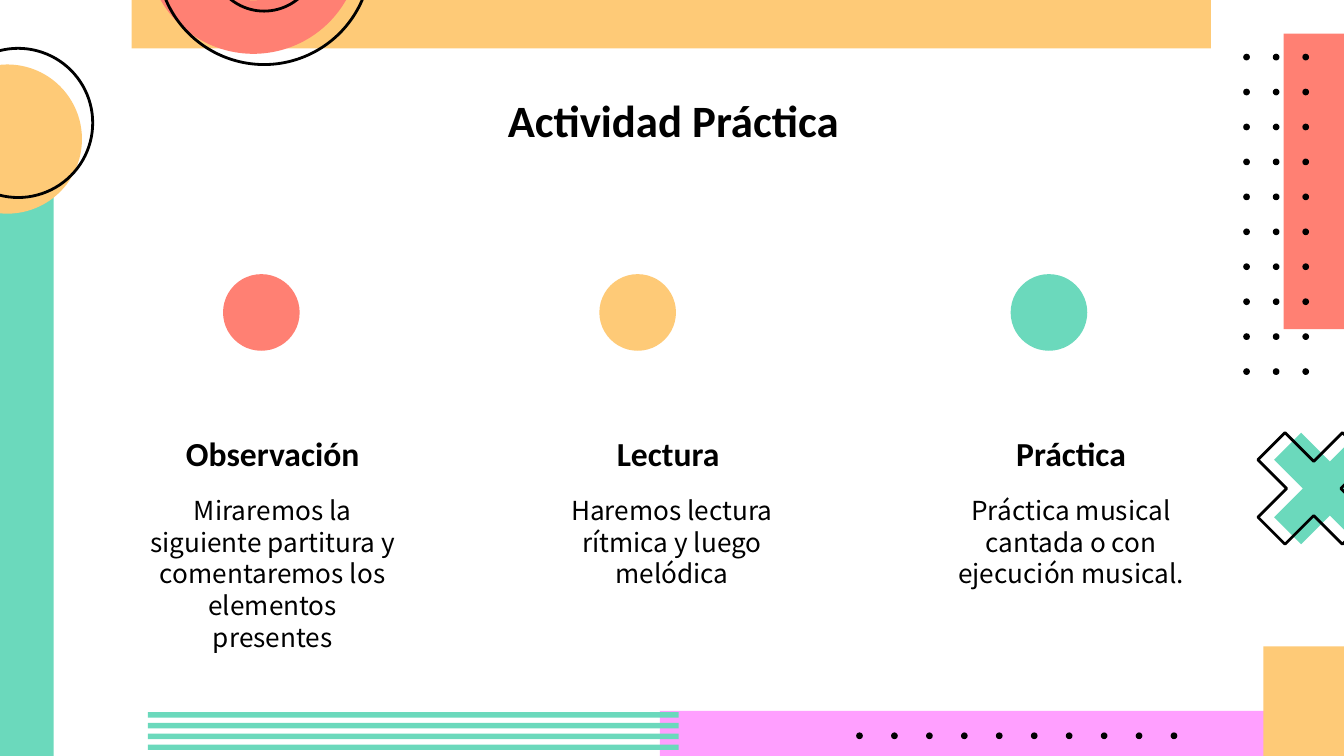
from pptx import Presentation
from pptx.dml.color import RGBColor
from pptx.enum import shapes, text
from pptx.util import Inches, Pt

HUES = {"coral": "FF8073", "sand": "FECA77", "mint": "6BD9BC",
        "pink": "FF9FFF", "ink": "000000"}
KIND = shapes.MSO_SHAPE
RECT, OVAL, CROSS, ARC = (KIND.RECTANGLE, KIND.OVAL,
                          KIND.MATH_MULTIPLY, KIND.BLOCK_ARC)

TITLE = "Actividad Práctica"
STEPS = [  # heading, body, dot colour, dot left
    ("Observación",
     "Miraremos la siguiente partitura y comentaremos los elementos presentes",
     "coral", 1.66),
    ("Lectura ", "Haremos lectura rítmica y luego melódica", "sand", 4.46),
    ("Práctica", "Práctica musical cantada o con ejecución musical.",
     "mint", 7.52),
]
HEAD = {"name": "Calibri", "bold": True}
BODY = {"name": "Noto Sans CJK KR", "bold": False, "size": Pt(14)}

# Decoration, back to front: kind, (left, top, width, height), fill
# A fill of None gives a black outline.
STRIPES = [(RECT, (1.1, 5.3 + 0.08 * i, 3.95, 0.04), "mint") for i in range(4)]
LOW_DOTS = [(OVAL, (6.37 + 0.26 * i, 5.45, 0.05, 0.05), "ink")
            for i in range(10)]
SIDE_DOTS = [(OVAL, (9.25 + 0.22 * col, 0.4 + 0.26 * row, 0.05, 0.05), "ink")
             for col in range(3) for row in range(10)]
DECOR = [
    (RECT, (9.55, 0.25, 0.45, 2.2), "coral"),
    (RECT, (4.91, 5.29, 5.09, 0.5), "pink"),
    *STRIPES,
    (RECT, (9.4, 4.81, 1.02, 1.02), "sand"),
    *LOW_DOTS,
    (RECT, (-0.03, 1.08, 0.43, 4.55), "mint"),
    (OVAL, (-0.5, 0.48, 1.11, 1.11), "sand"),
    (OVAL, (-0.42, 0.36, 1.11, 1.11), None),
    (CROSS, (9.29, 3.03, 1.21, 1.21), "mint"),
    (CROSS, (9.17, 3.03, 1.21, 1.21), None),
    *SIDE_DOTS,
    (RECT, (0.98, 0, 8.03, 0.36), "sand"),
    (ARC, (1.09, -1.19, 1.59, 1.59), "coral"),
    (ARC, (1.17, -1.11, 1.59, 1.59), None),
]
ADJUST = {CROSS: [0.235], ARC: [108, 0, 0.25]}


def hue(key):
    return RGBColor.from_string(HUES[key])


def draw(slide, kind, box, fill):
    shape = slide.shapes.add_shape(kind, *map(Inches, box))
    shape.shadow.inherit = False
    for i, val in enumerate(ADJUST.get(kind, [])):
        shape.adjustments[i] = val
    if kind == ARC:
        shape.rotation = 180
    if fill:
        shape.fill.solid()
        shape.fill.fore_color.rgb = hue(fill)
        shape.line.fill.background()
    else:
        shape.fill.background()
        shape.line.color.rgb = hue("ink")
        shape.line.width = Pt(1.5)


def write(shape, words, style, pitch=None):
    """Fill a text shape; pitch is the line spacing."""
    frame = shape.text_frame
    form = {"word_wrap": True, "auto_size": text.MSO_AUTO_SIZE.NONE,
            "vertical_anchor": text.MSO_ANCHOR.TOP}
    form.update({f"margin_{side}": Inches(0.1)
                 for side in ("left", "top", "right", "bottom")})
    for key, val in form.items():
        setattr(frame, key, val)
    para = frame.paragraphs[0]
    para.alignment = text.PP_ALIGN.CENTER
    para.line_spacing = pitch
    run = para.add_run()
    run.text = words
    for key, val in style.items():
        setattr(run.font, key, val)
    run.font.color.rgb = hue("ink")


def main():
    deck = Presentation()
    deck.slide_width = Inches(10)
    deck.slide_height = deck.slide_width * 9 // 16
    slide = deck.slides.add_slide(deck.slide_layouts[5])

    for kind, box, fill in DECOR:
        draw(slide, kind, box, fill)

    title = slide.shapes.title
    place = zip(("left", "top", "width", "height"), (0.81, 0.59, 8.4, 0.67))
    for key, val in place:
        setattr(title, key, Inches(val))
    write(title, TITLE, {**HEAD, "size": Pt(24)})

    for i, (head, body, fill, left) in enumerate(STEPS):
        draw(slide, OVAL, (left, 2.04, 0.57, 0.57), fill)
        col = 1.01 + 2.97 * i
        for words, top, high, style, pitch in (
                (head, 3.12, 0.44, {**HEAD, "size": Pt(18)}, None),
                (body, 3.58, 1.08, BODY, Pt(16.9))):
            box = slide.shapes.add_textbox(
                *map(Inches, (col, top, 2.04, high)))
            write(box, words, style, pitch)

    deck.save("out.pptx")


if __name__ == "__main__":
    main()
